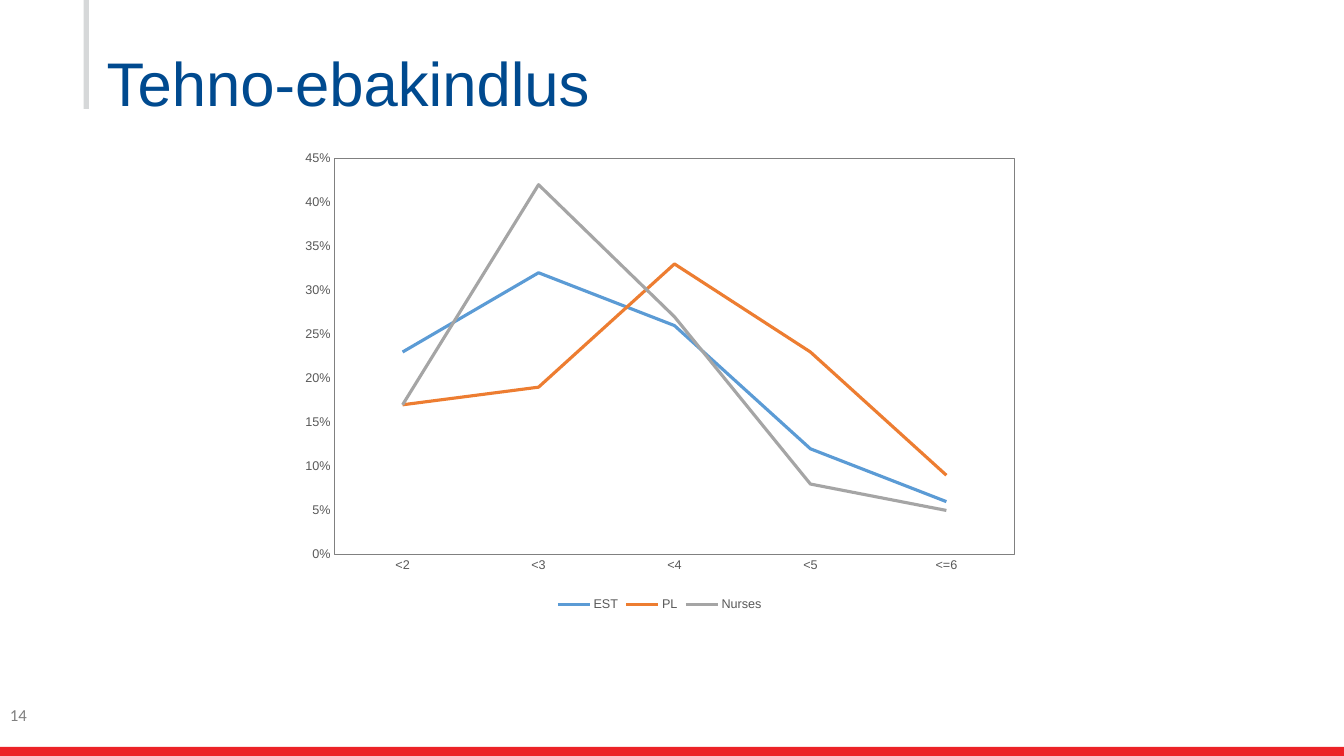
from dataclasses import dataclass

from lxml import etree
from pptx import Presentation
from pptx.chart.data import CategoryChartData
from pptx.dml.color import RGBColor
from pptx.enum.chart import XL_CHART_TYPE, XL_LEGEND_POSITION, XL_MARKER_STYLE, XL_TICK_MARK
from pptx.enum.shapes import MSO_SHAPE
from pptx.enum.text import MSO_ANCHOR
from pptx.oxml import parse_xml
from pptx.oxml.ns import nsdecls, qn
from pptx.util import Emu, Inches, Pt

LINE = XL_CHART_TYPE.LINE
BOTTOM = XL_LEGEND_POSITION.BOTTOM
BARE = XL_MARKER_STYLE.NONE
NO_TICK = XL_TICK_MARK.NONE
RECT = MSO_SHAPE.RECTANGLE
TOP, MIDDLE = MSO_ANCHOR.TOP, MSO_ANCHOR.MIDDLE

WIDTH, HEIGHT = Inches(13.33), Inches(7.5)
GRID = 100  # columns across and rows down the slide
COLORS = {
    "red": "EC2227", "rule": "D6D8D9", "title": "004A8F", "edge": "808080",
    "label": "595959", "blue": "5B9BD5", "orange": "ED7D31", "gray": "A5A5A5",
}
AXIS = {"major_tick_mark": NO_TICK, "minor_tick_mark": NO_TICK,
        "has_major_gridlines": False}
SCALE = {"minimum_scale": 0, "maximum_scale": 0.45, "major_unit": 0.05}
PLOT = {"x": 0.06, "y": 0.03, "w": 0.92, "h": 0.84}
LEVELS = ["<2", "<3", "<4", "<5", "<=6"]


@dataclass
class Area:
    """Place in grid columns and rows."""
    col: float
    row: float
    cols: float
    rows: float

    def box(self) -> tuple:
        return (Emu(int(WIDTH * self.col / GRID)), Emu(int(HEIGHT * self.row / GRID)),
                Emu(int(WIDTH * self.cols / GRID)), Emu(int(HEIGHT * self.rows / GRID)))


@dataclass
class Bar:
    area: Area
    color: str


@dataclass
class Label:
    area: Area
    text: str
    font: str
    size: int
    color: str
    anchor: MSO_ANCHOR
    inset: float
    spacing: float


@dataclass
class Group:
    name: str
    color: str
    shares: tuple


BARS = [
    Bar(Area(6.23, 0, 0.38, 14.4), "rule"),
    Bar(Area(0, 98.8, 100, 1.2), "red"),
]
LABELS = [
    Label(Area(7.2, 5.6, 86.25, 13.47), "Tehno-ebakindlus", "Arial", 44, "title", TOP, 0.11, 0.9),
    Label(Area(0, 91.87, 22.5, 5.33), "14", "Calibri", 12, "edge", MIDDLE, 0.05, 1.0),
]
GROUPS = [
    Group("EST", "blue", (0.23, 0.32, 0.26, 0.12, 0.06)),
    Group("PL", "orange", (0.17, 0.19, 0.33, 0.23, 0.09)),
    Group("Nurses", "gray", (0.17, 0.42, 0.27, 0.08, 0.05)),
]
CHART = Area(21.6, 19.07, 54.98, 62.4)


def rgb(name: str) -> RGBColor:
    return RGBColor.from_string(COLORS[name])


def apply(target, values: dict) -> None:
    for key, value in values.items():
        setattr(target, key, value)


def style(font, face: str, size: int, color: str) -> None:
    apply(font, {"name": face, "size": Pt(size)})
    font.color.rgb = rgb(color)


def stroke(line, color: str, width: float) -> None:
    line.color.rgb = rgb(color)
    line.width = Pt(width)


def add_bar(slide, bar: Bar) -> None:
    shape = slide.shapes.add_shape(RECT, *bar.area.box())
    shape.shadow.inherit = False
    shape.fill.solid()
    shape.fill.fore_color.rgb = rgb(bar.color)
    shape.line.fill.background()


def add_label(slide, label: Label) -> None:
    frame = slide.shapes.add_textbox(*label.area.box()).text_frame
    apply(frame, {"word_wrap": True, "vertical_anchor": label.anchor,
                  "margin_top": Inches(label.inset)})
    para = frame.paragraphs[0]
    para.line_spacing = label.spacing
    run = para.add_run()
    run.text = label.text
    style(run.font, label.font, label.size, label.color)


def frame_plot(chart) -> None:
    """Fix the inner plot area and outline it."""
    area = chart._chartSpace.chart.plotArea
    for old in area.findall(qn("c:layout")):
        area.remove(old)
    layout = parse_xml(f"<c:layout {nsdecls('c')}/>")
    manual = etree.SubElement(layout, qn("c:manualLayout"))
    parts = {"layoutTarget": "inner", "xMode": "edge", "yMode": "edge", **PLOT}
    for tag, value in parts.items():
        etree.SubElement(manual, qn(f"c:{tag}")).set("val", str(value))
    area.insert(0, layout)
    area.append(parse_xml(
        f"<c:spPr {nsdecls('c', 'a')}><a:noFill/><a:ln w=\"{Pt(0.75)}\"><a:solidFill>"
        f"<a:srgbClr val=\"{COLORS['edge']}\"/></a:solidFill></a:ln></c:spPr>"))


def add_chart(slide) -> None:
    data = CategoryChartData(number_format="0%")
    data.categories = LEVELS
    for group in GROUPS:
        data.add_series(group.name, group.shares)
    chart = slide.shapes.add_chart(LINE, *CHART.box(), data).chart
    apply(chart, {"has_title": False, "has_legend": True})
    apply(chart.legend, {"position": BOTTOM, "include_in_layout": False})
    chart.plots[0].vary_by_categories = False
    for part in (chart, chart.legend):
        style(part.font, "Arial", 9, "label")
    for axis in (chart.category_axis, chart.value_axis):
        apply(axis, AXIS)
        style(axis.tick_labels.font, "Arial", 9, "label")
    stroke(chart.category_axis.format.line, "edge", 0.75)
    apply(chart.value_axis, SCALE)
    chart.value_axis.format.line.fill.background()
    apply(chart.value_axis.tick_labels, {"number_format": "0%", "number_format_is_linked": False})
    for series, group in zip(chart.plots[0].series, GROUPS):
        series.smooth = False
        series.marker.style = BARE
        stroke(series.format.line, group.color, 2.25)
    frame_plot(chart)


def main() -> None:
    deck = Presentation()
    apply(deck, {"slide_width": WIDTH, "slide_height": HEIGHT})
    slide = deck.slides.add_slide(deck.slide_layouts[6])
    for bar in BARS:
        add_bar(slide, bar)
    for label in LABELS:
        add_label(slide, label)
    add_chart(slide)
    deck.save("out.pptx")


if __name__ == "__main__":
    main()
